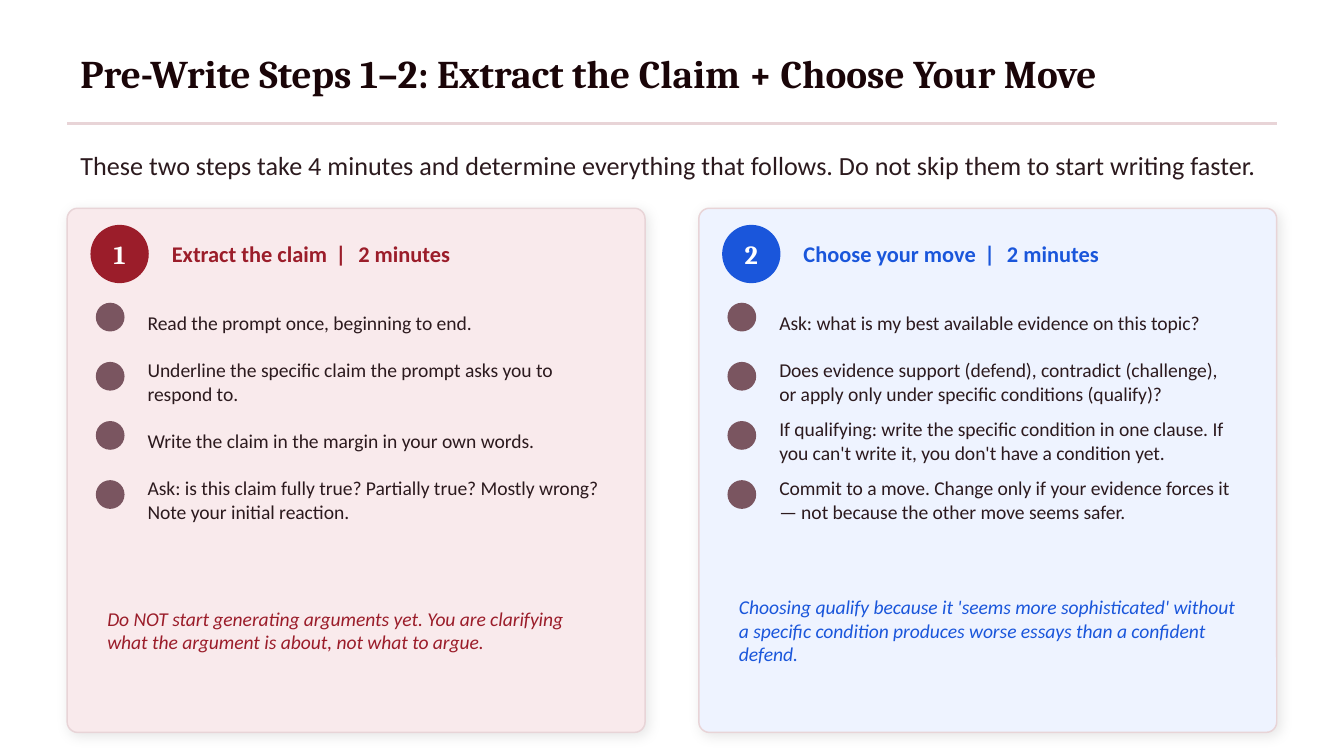
from lxml.etree import SubElement
from pptx import Presentation
from pptx.dml.color import RGBColor
from pptx.enum.shapes import MSO_CONNECTOR, MSO_SHAPE
from pptx.enum.text import MSO_ANCHOR, PP_ALIGN
from pptx.oxml.ns import qn
from pptx.util import Pt

WHITE = RGBColor(0xFF, 0xFF, 0xFF)
TITLE_INK = RGBColor(0x1A, 0x05, 0x08)
BODY_INK = RGBColor(0x2C, 0x1A, 0x1E)
BORDER = RGBColor(0xE8, 0xD4, 0xD7)
DOT = RGBColor(0x7A, 0x55, 0x60)
RED = RGBColor(0x9B, 0x1D, 0x2A)
RED_TINT = RGBColor(0xF9, 0xEA, 0xEC)
BLUE = RGBColor(0x1A, 0x56, 0xDB)
BLUE_TINT = RGBColor(0xEE, 0xF3, 0xFF)

HEADING_FONT = "Cambria"
BODY_FONT = "Calibri"

TITLE = "Pre-Write Steps 1–2: Extract the Claim + Choose Your Move"
INTRO = (
    "These two steps take 4 minutes and determine everything that follows. "
    "Do not skip them to start writing faster."
)
STEPS = [
    {
        "name": "Extract the claim",
        "time": "2 minutes",
        "accent": RED,
        "tint": RED_TINT,
        "actions": [
            "Read the prompt once, beginning to end.",
            "Underline the specific claim the prompt asks you to respond to.",
            "Write the claim in the margin in your own words.",
            "Ask: is this claim fully true? Partially true? Mostly wrong? "
            "Note your initial reaction.",
        ],
        "warning": "Do NOT start generating arguments yet. You are clarifying "
        "what the argument is about, not what to argue.",
    },
    {
        "name": "Choose your move",
        "time": "2 minutes",
        "accent": BLUE,
        "tint": BLUE_TINT,
        "actions": [
            "Ask: what is my best available evidence on this topic?",
            "Does evidence support (defend), contradict (challenge), "
            "or apply only under specific conditions (qualify)?",
            "If qualifying: write the specific condition in one clause. "
            "If you can't write it, you don't have a condition yet.",
            "Commit to a move. Change only if your evidence forces it "
            "— not because the other move seems safer.",
        ],
        "warning": "Choosing qualify because it 'seems more sophisticated' without "
        "a specific condition produces worse essays than a confident defend.",
    },
]

SLIDE_W, SLIDE_H = 720, 405
MARGIN = 36
CONTENT_W = SLIDE_W - 2 * MARGIN
CARD_GAP = 28.8
CARD_W = (CONTENT_W - CARD_GAP * (len(STEPS) - 1)) / len(STEPS)
CARD_TOP, CARD_H = 111.6, 280.8
HEADER_TOP, BADGE = 120.96, 30.24
ACTIONS_TOP, ACTION_PITCH, ACTION_H = 158.4, 31.68, 28.8
DOT_SIZE, DOT_DROP = 14.4, 4.32


def add_run(paragraph, text, size, color, font=BODY_FONT, bold=False, italic=False):
    run = paragraph.add_run()
    run.text = text
    run.font.name = font
    run.font.size = Pt(size)
    run.font.bold = bold
    run.font.italic = italic
    run.font.color.rgb = color
    return run


def add_text_box(slide, left, top, width, height):
    frame = slide.shapes.add_textbox(Pt(left), Pt(top), Pt(width), Pt(height)).text_frame
    frame.word_wrap = True
    frame.vertical_anchor = MSO_ANCHOR.MIDDLE
    return frame.paragraphs[0]


def add_shape(slide, preset, left, top, width, height, fill, border, border_width=1):
    shape = slide.shapes.add_shape(preset, Pt(left), Pt(top), Pt(width), Pt(height))
    shape.fill.solid()
    shape.fill.fore_color.rgb = fill
    shape.line.color.rgb = border
    shape.line.width = Pt(border_width)
    shape.shadow.inherit = False
    return shape


def add_soft_shadow(shape):
    effects = shape._element.spPr.find(qn("a:effectLst"))
    shadow = SubElement(effects, qn("a:outerShdw"), blurRad=str(Pt(7)),
                        dist=str(Pt(2)), dir=str(45 * 60000), algn="bl", rotWithShape="0")
    black = SubElement(shadow, qn("a:srgbClr"), val="000000")
    SubElement(black, qn("a:alpha"), val="9000")


def add_header(slide):
    title = add_text_box(slide, MARGIN, 15.84, CONTENT_W, 46.8)
    add_run(title, TITLE, 21, TITLE_INK, HEADING_FONT, bold=True)
    rule = slide.shapes.add_connector(
        MSO_CONNECTOR.STRAIGHT, Pt(MARGIN), Pt(66.24), Pt(MARGIN + CONTENT_W), Pt(66.24))
    rule.line.color.rgb = BORDER
    rule.line.width = Pt(1.2)
    SubElement(rule._element.spPr, qn("a:effectLst"))
    intro = add_text_box(slide, MARGIN, 72, CONTENT_W, 32.4)
    add_run(intro, INTRO, 14, BODY_INK)


def add_step(slide, number, step, left):
    accent = step["accent"]
    card = add_shape(slide, MSO_SHAPE.ROUNDED_RECTANGLE, left, CARD_TOP, CARD_W, CARD_H,
                     step["tint"], BORDER, 0.8)
    card.adjustments[0] = 0.02
    add_soft_shadow(card)

    badge = add_shape(slide, MSO_SHAPE.OVAL, left + 12.96, HEADER_TOP, BADGE, BADGE,
                      accent, accent)
    frame = badge.text_frame
    frame.margin_left = frame.margin_right = frame.margin_top = frame.margin_bottom = 0
    frame.vertical_anchor = MSO_ANCHOR.MIDDLE
    frame.paragraphs[0].alignment = PP_ALIGN.CENTER
    add_run(frame.paragraphs[0], str(number), 14, WHITE, HEADING_FONT, bold=True)

    heading = add_text_box(slide, left + 48.96, HEADER_TOP, 246.24, BADGE)
    add_run(heading, step["name"], 12, accent, bold=True)
    divider = add_run(heading, " | ", 12, accent, bold=True)
    divider._r.get_or_add_rPr().set("spc", "180")
    add_run(heading, step["time"], 12, accent, bold=True)

    for row, action in enumerate(step["actions"]):
        top = ACTIONS_TOP + row * ACTION_PITCH
        add_shape(slide, MSO_SHAPE.OVAL, left + 15.84, top + DOT_DROP, DOT_SIZE, DOT_SIZE,
                  DOT, DOT)
        add_run(add_text_box(slide, left + 36, top, 259.2, ACTION_H), action, 10.5, BODY_INK)

    warning = add_text_box(slide, left + 14.4, 290.88, 280.8, 93.6)
    add_run(warning, step["warning"], 10.5, accent, italic=True)


def main():
    deck = Presentation()
    deck.slide_width, deck.slide_height = Pt(SLIDE_W), Pt(SLIDE_H)
    slide = deck.slides.add_slide(deck.slide_layouts[6])
    slide.background.fill.solid()
    slide.background.fill.fore_color.rgb = WHITE
    add_header(slide)
    for index, step in enumerate(STEPS):
        add_step(slide, index + 1, step, MARGIN + index * (CARD_W + CARD_GAP))
    deck.save("out.pptx")


if __name__ == "__main__":
    main()
